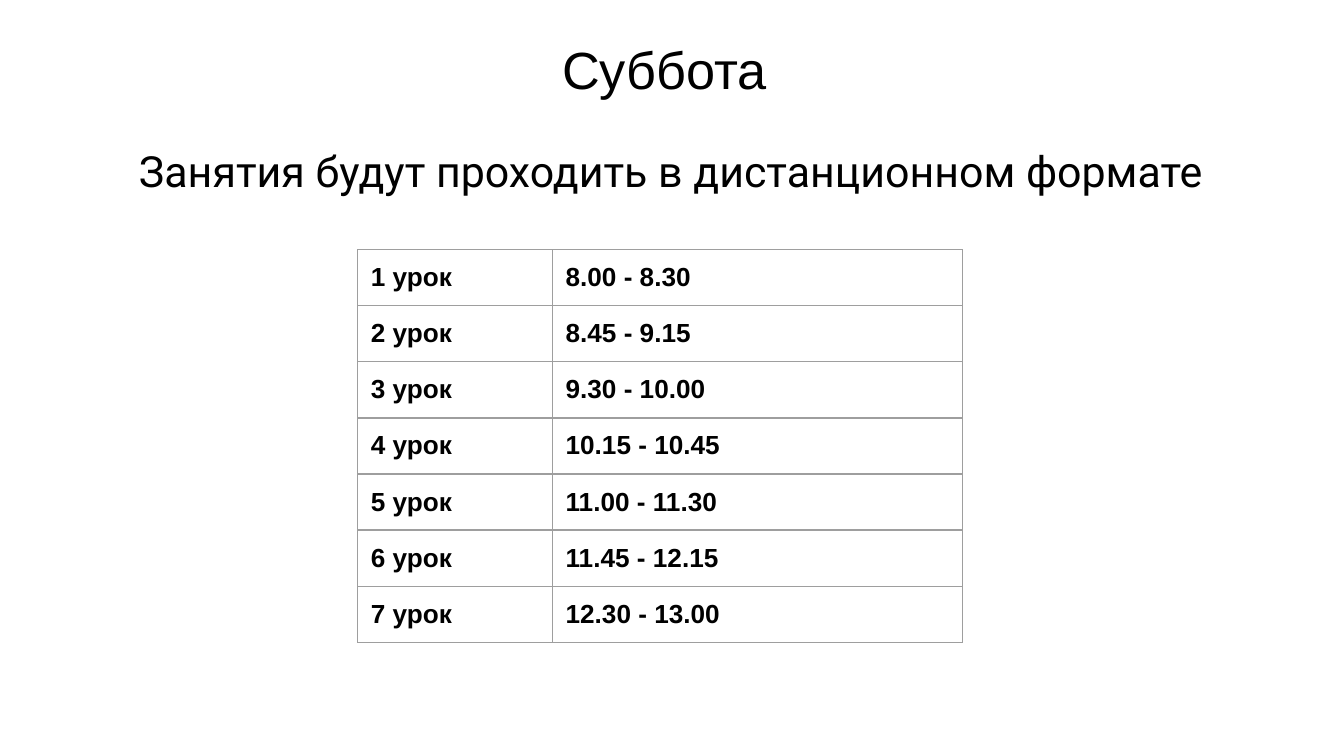
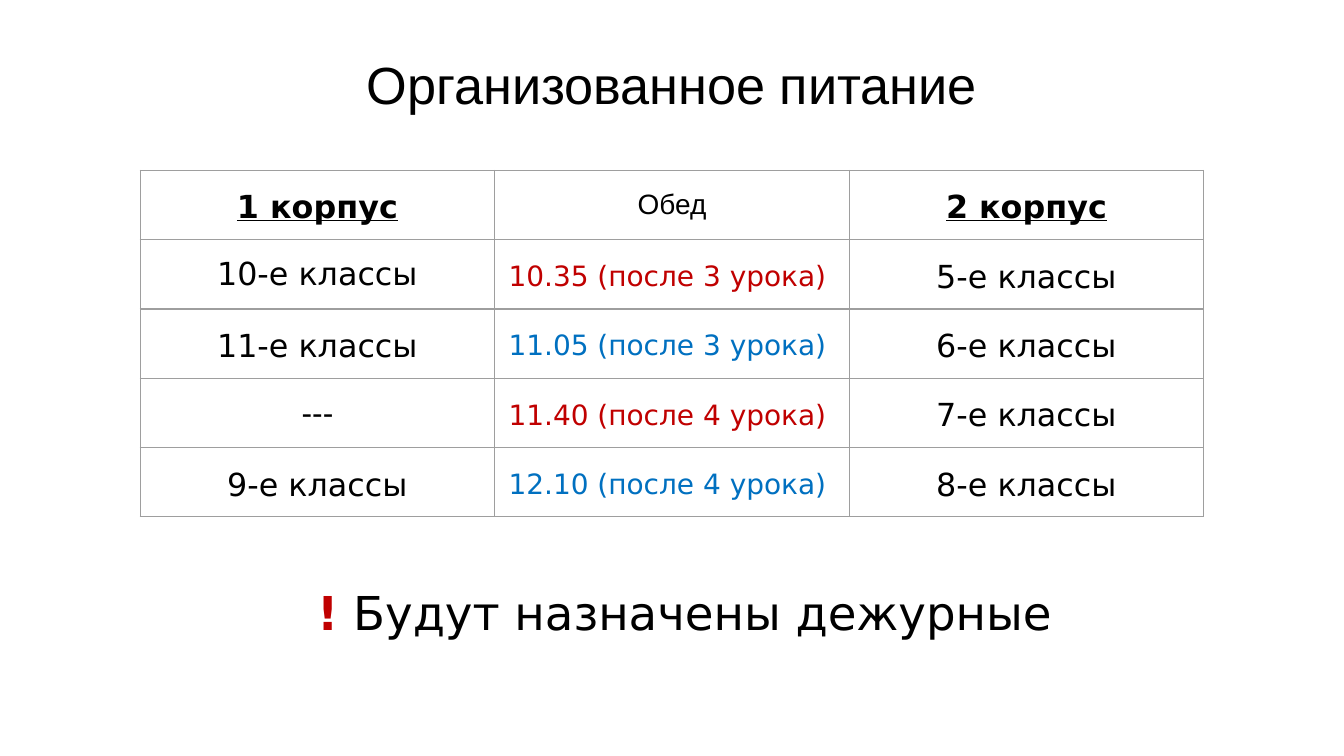
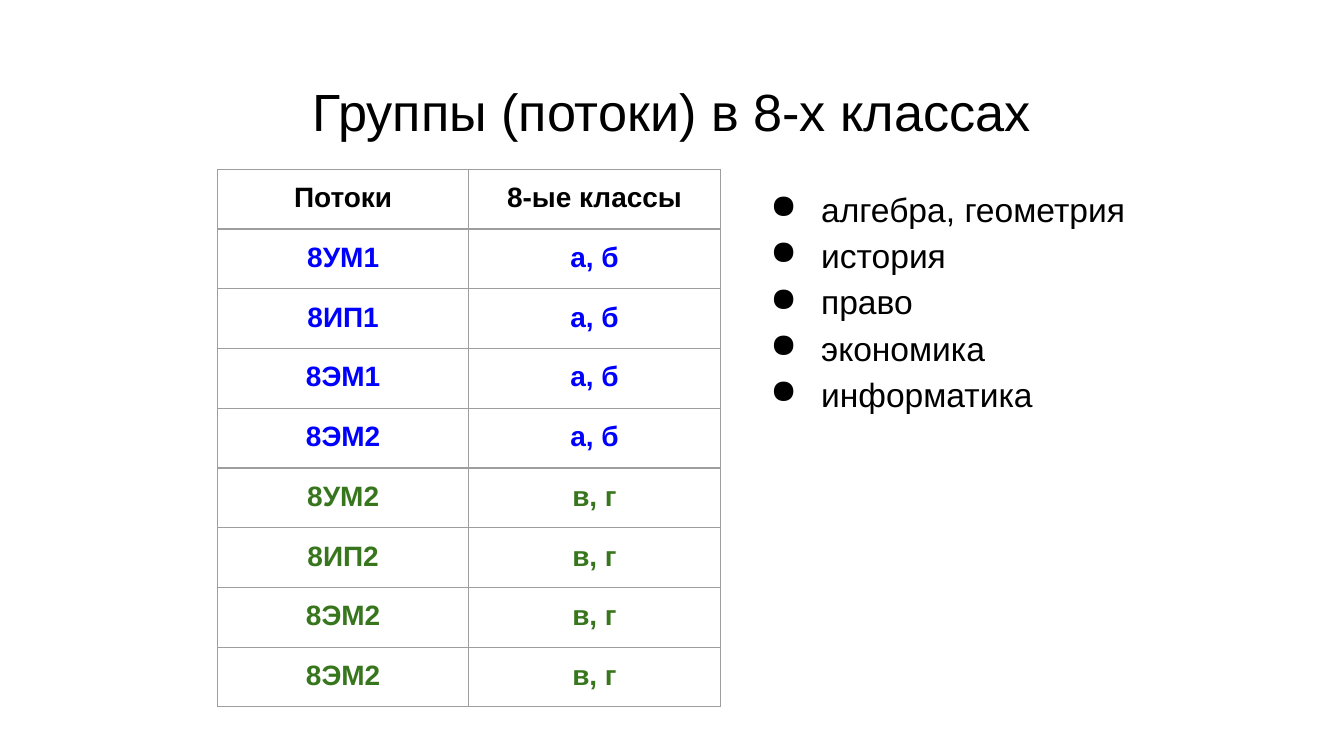
from dataclasses import dataclass, replace

from pptx import Presentation
from pptx.dml.color import RGBColor
from pptx.enum.text import MSO_ANCHOR as Anchor, MSO_AUTO_SIZE as Fit, PP_ALIGN as Align
from pptx.oxml.ns import qn
from pptx.util import Cm, Pt
from lxml.etree import SubElement as Sub

BLACK, RED, SKY = "000000", "C00000", "0070C0"
BLUE, GREEN, GREY = "0000FF", "38761D", "9E9E9E"
PAD = Cm(0.25)
LEFT, WIDE = 0.86, 23.67
TITLE_ONLY = 5


@dataclass(frozen=True)
class Style:
    size: float
    name: str = "Arial"
    color: str = BLACK
    bold: bool = False
    under: bool = False
    space: float = 1.0


@dataclass(frozen=True)
class Run:
    text: str
    style: Style


@dataclass(frozen=True)
class Box:
    left: float
    top: float
    width: float
    height: float


@dataclass(frozen=True)
class Grid:
    left: float
    top: float
    cols: list[float]
    row: float
    align: Align = Align.CENTER
    anchor: Anchor = Anchor.TOP


HEAD = Style(28)
HOUR = Style(14, bold=True)
GROUP = Style(15, bold=True)
CLASS = Style(17, "DejaVu Sans", space=1.15)
BLOCK = replace(CLASS, bold=True, under=True)
LUNCH = replace(CLASS, size=15)
NOTE = Style(25, "DejaVu Sans", space=1.15)
TOPIC = Style(18, space=1.15)


def rgb(code: str) -> RGBColor:
    return RGBColor.from_string(code)


def apply(target, values: dict) -> None:
    for key, value in values.items():
        setattr(target, key, value)


def write(para, runs: list[Run], align: Align) -> None:
    apply(para, {"alignment": align, "line_spacing": runs[0].style.space})
    for item in runs:
        run, style = para.add_run(), item.style
        run.text = item.text
        apply(run.font, {"size": Pt(style.size), "name": style.name,
                         "bold": style.bold, "underline": style.under})
        run.font.color.rgb = rgb(style.color)


def pad(target) -> None:
    apply(target, dict.fromkeys(
        ("margin_left", "margin_right", "margin_top", "margin_bottom"), PAD))


def place(shape, box: Box):
    """Move the shape to the box and return its prepared text frame."""
    apply(shape, {"left": Cm(box.left), "top": Cm(box.top),
                  "width": Cm(box.width), "height": Cm(box.height)})
    frame = shape.text_frame
    apply(frame, {"word_wrap": True, "auto_size": Fit.NONE,
                  "vertical_anchor": Anchor.TOP})
    pad(frame)
    return frame


def start(deck, title: str, top: float):
    """Add a slide with its title at the given height."""
    slide = deck.slides.add_slide(deck.slide_layouts[TITLE_ONLY])
    frame = place(slide.shapes.title, Box(LEFT, top, WIDE, 1.6))
    write(frame.paragraphs[0], [Run(title, HEAD)], Align.CENTER)
    return slide


def add_text(slide, box: Box, lines: list[list[Run]], align: Align = Align.CENTER):
    frame = place(slide.shapes.add_textbox(0, 0, 0, 0), box)
    for i, runs in enumerate(lines):
        para = frame.add_paragraph() if i else frame.paragraphs[0]
        write(para, runs, align)
    return frame


def bullet(para) -> None:
    props = para._p.get_or_add_pPr()
    props.set("marL", str(Cm(1.27)))
    props.set("indent", str(-Cm(0.96)))
    Sub(Sub(props, qn("a:buClr")), qn("a:srgbClr"), val=BLACK)
    Sub(props, qn("a:buChar"), char="●")


def border(cell) -> None:
    props = cell._tc.get_or_add_tcPr()
    for side in ("lnL", "lnR", "lnT", "lnB"):
        line = Sub(props, qn(f"a:{side}"), w=str(Pt(0.75)))
        Sub(Sub(line, qn("a:solidFill")), qn("a:srgbClr"), val=GREY)


def add_grid(slide, grid: Grid, rows: list[list[Run]]) -> None:
    table = slide.shapes.add_table(
        len(rows), len(grid.cols), Cm(grid.left), Cm(grid.top),
        Cm(sum(grid.cols)), Cm(grid.row * len(rows))).table
    apply(table, {"first_row": False, "horz_banding": False})
    for col, width in zip(table.columns, grid.cols):
        col.width = Cm(width)
    for line, runs in zip(table.rows, rows):
        line.height = Cm(grid.row)
        for cell, run in zip(line.cells, runs):
            pad(cell)
            cell.vertical_anchor = grid.anchor
            border(cell)
            cell.fill.background()
            write(cell.text_frame.paragraphs[0], [run], grid.align)


def saturday(deck) -> None:
    slide = start(deck, "Суббота ", 0.46)
    lead = Run("Занятия будут проходить в дистанционном формате",
               Style(23, "Roboto", space=1.15))
    add_text(slide, Box(LEFT, 2.34, WIDE, 1.35), [[lead]])
    hours = ["8.00 - 8.30", "8.45 - 9.15", "9.30 - 10.00", "10.15 - 10.45",
             "11.00 - 11.30", "11.45 - 12.15", "12.30 - 13.00"]
    rows = [[Run(f"{i} урок", HOUR), Run(hour, HOUR)]
            for i, hour in enumerate(hours, 1)]
    add_grid(slide, Grid(6.76, 4.72, [3.68, 7.75], 1.06, Align.LEFT), rows)


def meals(deck) -> None:
    slide = start(deck, "Организованное питание", 0.74)
    rows = [[Run("1 корпус", BLOCK), Run("Обед", Style(15)), Run("2 корпус", BLOCK)]]
    shifts = [
        (Run("10-е классы", replace(CLASS, space=1.0)), "10.35 (после 3 урока) ", RED),
        (Run("11-е классы", CLASS), "11.05 (после 3 урока) ", SKY),
        (Run("---", Style(17)), "11.40 (после 4 урока) ", RED),
        (Run("9-е классы", CLASS), "12.10 (после 4 урока) ", SKY),
    ]
    for grade, (first, time, color) in enumerate(shifts, 5):
        rows.append([first, Run(time, replace(LUNCH, color=color)),
                     Run(f"{grade}-е классы", CLASS)])
    add_grid(slide, Grid(2.65, 3.22, [6.7] * 3, 1.31, anchor=Anchor.MIDDLE), rows)
    note = [Run("!", replace(NOTE, color=RED, bold=True)),
            Run(" Будут назначены дежурные", NOTE)]
    frame = add_text(slide, Box(1.1, 10.62, WIDE, 1.8), [note])
    frame.paragraphs[0].space_before = Pt(7)


def groups(deck) -> None:
    slide = start(deck, "Группы (потоки) в 8-х классах", 1.24)
    topics = ["алгебра, геометрия", "история", "право", "экономика", "информатика"]
    frame = add_text(slide, Box(14, 3.2, 10.54, 9.5),
                     [[Run(topic, TOPIC)] for topic in topics], Align.LEFT)
    for para in frame.paragraphs:
        bullet(para)
    rows = [[Run("Потоки", GROUP), Run("8-ые классы", GROUP)]]
    streams = [("а, б", BLUE, ["8УМ1", "8ИП1", "8ЭМ1", "8ЭМ2"]),
               ("в, г", GREEN, ["8УМ2", "8ИП2", "8ЭМ2", "8ЭМ2"])]
    for letters, color, names in streams:
        style = replace(GROUP, color=color)
        rows += [[Run(name, style), Run(letters, style)] for name in names]
    add_grid(slide, Grid(4.11, 3.2, [4.75] * 2, 1.13), rows)


def main() -> None:
    deck = Presentation()
    apply(deck, {"slide_width": Cm(25.4), "slide_height": Cm(14.29)})
    for build in (saturday, meals, groups):
        build(deck)
    deck.save("out.pptx")


if __name__ == "__main__":
    main()
